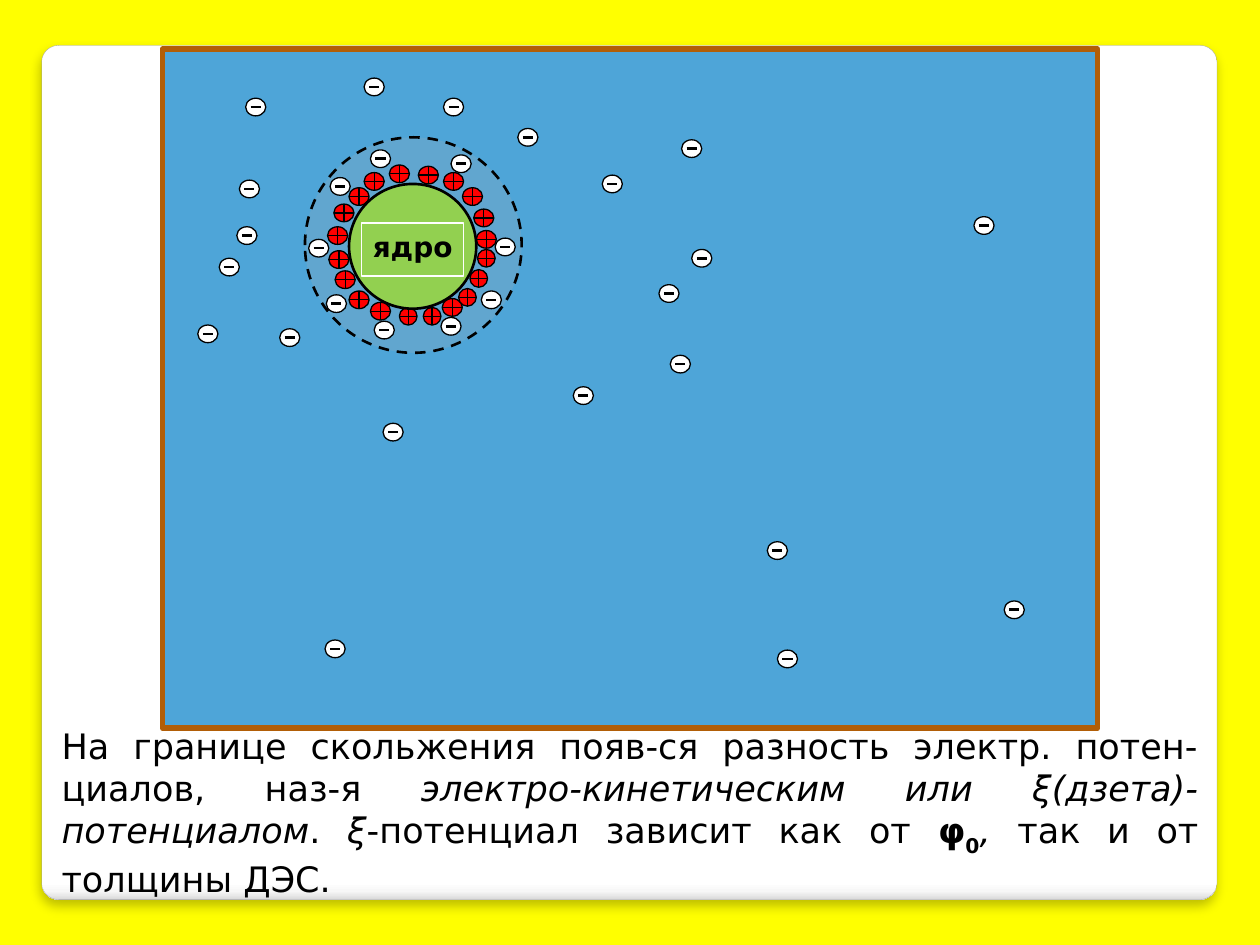
"""Builds a slide of a micelle core with its ions and a note on the zeta potential."""
from dataclasses import dataclass

from lxml.etree import SubElement
from pptx import Presentation
from pptx.dml.color import RGBColor
from pptx.enum.dml import MSO_LINE
from pptx.enum.shapes import MSO_CONNECTOR, MSO_SHAPE
from pptx.enum.text import MSO_ANCHOR, MSO_AUTO_SIZE, PP_ALIGN
from pptx.oxml.ns import qn
from pptx.shapes.base import BaseShape
from pptx.util import Inches, Pt


@dataclass(frozen=True)
class Theme:
    font: str = "DejaVu Sans"
    backdrop: str = "FFFF00"
    panel_edge: str = "A4A4A4"
    solution: str = "4EA5D8"
    frame: str = "B25E07"
    layer: str = "ADADAD"
    core: str = "92D050"
    cation: str = "FF0000"
    white: str = "FFFFFF"
    black: str = "000000"
    label_size: float = 16
    body_size: float = 20
    thin: float = 0.75
    thick: float = 1.5


@dataclass(frozen=True)
class Area:
    left: float
    top: float
    width: float = 0.16
    height: float = 0.14

    def lengths(self) -> list:
        return [Inches(value) for value in (self.left, self.top, self.width, self.height)]


@dataclass(frozen=True)
class Span:
    text: str
    bold: bool = False
    italic: bool = False
    baseline: int = 0


THEME = Theme()
PANEL_STOPS = ((0, "FFFFFF"), (98, "FFFFFF"), (99, "F7F7F7"), (100, "DADADA"))
FREE_ANIONS = [Area(*spot) for spot in (
    (1.57, 2.58), (5.41, 1.11), (4.11, 1.02), (5.23, 2.26), (5.49, 1.98), (5.32, 2.82),
    (2.22, 2.61), (1.88, 1.8), (4.78, 1.39), (4.55, 3.07), (1.74, 2.05), (1.9, 1.43),
    (1.95, 0.78), (3.04, 3.36), (2.89, 0.62), (3.52, 0.78), (6.09, 4.3), (7.97, 4.77),
    (6.17, 5.16), (7.73, 1.72), (2.58, 5.08))]
BOUND_ANIONS = [Area(*spot) for spot in (
    (2.94, 1.19), (2.59, 2.34), (3.93, 1.89), (3.82, 2.31), (2.97, 2.55), (3.5, 2.52),
    (2.62, 1.41), (2.45, 1.9), (3.58, 1.23))]
BACK_CATIONS = [Area(*spot) for spot in (
    (3.78, 1.83), (3.79, 1.98, 0.14), (2.61, 1.99), (2.77, 1.49), (2.6, 1.8),
    (3.17, 2.44, 0.14))]
FRONT_CATIONS = [Area(*spot) for spot in (
    (3.51, 2.37), (2.77, 2.31), (2.65, 1.62), (3.32, 1.32), (2.94, 2.4), (3.76, 1.66),
    (2.66, 2.15), (3.09, 1.31), (3.36, 2.44, 0.14), (3.73, 2.14, 0.14), (3.67, 1.49),
    (3.64, 2.29, 0.14), (2.89, 1.37), (3.52, 1.37))]
NOTE = (
    Span("На границе скольжения появ-ся разность электр. потен-циалов, наз-я "),
    Span("электро-кинетическим или ξ(дзета)- потенциалом", italic=True),
    Span(". "),
    Span("ξ", italic=True),
    Span("-потенциал зависит как от "),
    Span("φ", bold=True),
    Span("0", bold=True, baseline=-30),
    Span(", ", italic=True),
    Span("так и от толщины ДЭС. "),
)


def color(value: str) -> RGBColor:
    return RGBColor.from_string(value)


def add_figure(shapes, kind: MSO_SHAPE, area: Area, fill: str | None, line: str,
               weight: float) -> BaseShape:
    figure = shapes.add_shape(kind, *area.lengths())
    figure.shadow.inherit = False
    if fill:
        figure.fill.solid()
        figure.fill.fore_color.rgb = color(fill)
    else:
        figure.fill.background()
    figure.line.color.rgb = color(line)
    figure.line.width = Pt(weight)
    return figure


def add_panel(shapes) -> None:
    panel = add_figure(shapes, MSO_SHAPE.ROUNDED_RECTANGLE, Area(0.33, 0.36, 9.33, 6.78),
                       THEME.white, THEME.panel_edge, 0.16)
    panel.adjustments[0] = 0.02
    panel.fill.gradient()
    panel.fill.gradient_angle = 270
    properties = panel._element.spPr
    stops = properties.find(qn("a:gradFill")).find(qn("a:gsLst"))
    for stop in list(stops):
        stops.remove(stop)
    for position, value in PANEL_STOPS:
        stop = SubElement(stops, qn("a:gs"), pos=str(position * 1000))
        SubElement(stop, qn("a:srgbClr"), val=value)
    shadow = SubElement(properties.find(qn("a:effectLst")), qn("a:outerShdw"),
                        blurRad=str(Pt(6)), dist=str(Pt(4)), dir="5400000", rotWithShape="0")
    tint = SubElement(shadow, qn("a:srgbClr"), val=THEME.black)
    SubElement(tint, qn("a:alpha"), val="25000")


def add_anion(shapes, area: Area) -> None:
    add_figure(shapes, MSO_SHAPE.OVAL, area, THEME.white, THEME.black, THEME.thin)
    middle = Inches(area.top + area.height / 2)
    minus = shapes.add_connector(MSO_CONNECTOR.STRAIGHT, Inches(area.left + 0.04), middle,
                                 Inches(area.left + 0.12), middle)
    minus.line.color.rgb = color(THEME.black)
    minus.line.width = Pt(THEME.thick)
    SubElement(minus._element.spPr, qn("a:effectLst"))


def add_cation(shapes, area: Area) -> None:
    add_figure(shapes, MSO_SHAPE.FLOWCHART_OR, area, THEME.cation, THEME.black, THEME.thin)


def write(paragraph, text: str, *, size: float, bold: bool = False, italic: bool = False,
          baseline: int = 0) -> None:
    run = paragraph.add_run()
    run.text = text
    run.font.name = THEME.font
    run.font.size = Pt(size)
    run.font.bold = bold
    run.font.italic = italic
    run.font.color.rgb = color(THEME.black)
    if baseline:
        run.font._element.set("baseline", str(baseline * 1000))


def add_core(shapes) -> None:
    add_figure(shapes, MSO_SHAPE.OVAL, Area(2.77, 1.46, 1.01, 0.99), THEME.core,
               THEME.black, THEME.thick)
    label = add_figure(shapes, MSO_SHAPE.RECTANGLE, Area(2.87, 1.77, 0.81, 0.42), None,
                       THEME.white, THEME.thin)
    frame = label.text_frame
    frame.margin_left = frame.margin_right = Inches(0.04)
    frame.vertical_anchor = MSO_ANCHOR.TOP
    frame.paragraphs[0].alignment = PP_ALIGN.CENTER
    write(frame.paragraphs[0], "ядро", size=THEME.label_size, bold=True)


def add_micelle(page) -> None:
    shapes = page.shapes.add_group_shape().shapes
    layer = add_figure(shapes, MSO_SHAPE.OVAL, Area(2.42, 1.09, 1.72, 1.71), THEME.layer,
                       THEME.black, THEME.thick)
    layer.line.dash_style = MSO_LINE.DASH
    tint = layer._element.spPr.find(qn("a:solidFill")).find(qn("a:srgbClr"))
    SubElement(tint, qn("a:alpha"), val="20000")
    for area in BACK_CATIONS:
        add_cation(shapes, area)
    for area in BOUND_ANIONS:
        add_anion(shapes, area)
    add_core(shapes)
    for area in FRONT_CATIONS:
        add_cation(shapes, area)


def add_note(page) -> None:
    box = page.shapes.add_textbox(*Area(0.39, 5.7, 9.22, 1.45).lengths())
    box.text_frame.word_wrap = True
    box.text_frame.auto_size = MSO_AUTO_SIZE.SHAPE_TO_FIT_TEXT
    paragraph = box.text_frame.paragraphs[0]
    paragraph.alignment = PP_ALIGN.JUSTIFY
    for span in NOTE:
        write(paragraph, span.text, size=THEME.body_size, bold=span.bold, italic=span.italic,
              baseline=span.baseline)


def main() -> None:
    deck = Presentation()
    deck.slide_width, deck.slide_height = Inches(10), Inches(7.5)
    page = deck.slides.add_slide(deck.slide_layouts[6])
    page.background.fill.solid()
    page.background.fill.fore_color.rgb = color(THEME.backdrop)
    add_panel(page.shapes)
    add_figure(page.shapes, MSO_SHAPE.RECTANGLE, Area(1.29, 0.39, 7.42, 5.39),
               THEME.solution, THEME.frame, 3.35)
    add_micelle(page)
    for area in FREE_ANIONS:
        add_anion(page.shapes, area)
    add_note(page)
    deck.save("out.pptx")


if __name__ == "__main__":
    main()
